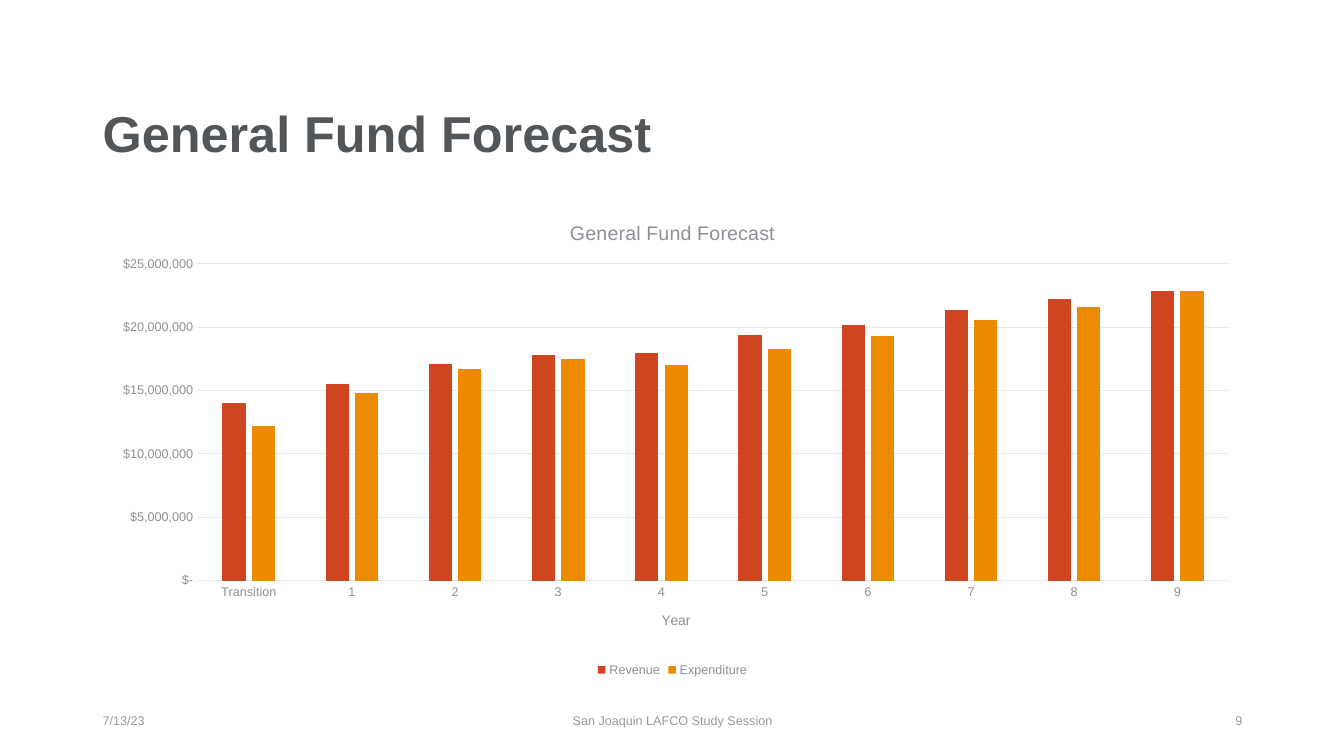
from lxml.etree import SubElement
from pptx import Presentation
from pptx.chart.data import CategoryChartData
from pptx.dml.color import RGBColor
from pptx.enum.chart import XL_CHART_TYPE as ChartType
from pptx.enum.chart import XL_LEGEND_POSITION as LegendPosition
from pptx.enum.chart import XL_TICK_MARK as TickMark
from pptx.enum.text import MSO_ANCHOR as Anchor
from pptx.enum.text import PP_ALIGN as Align
from pptx.oxml.ns import qn
from pptx.util import Pt

EMU_PER_PX = 9144  # 100 px to the inch
FONT = "Arial"
COLORS = {
    "title": "535659",
    "label": "8D9195",
    "footer": "999A9B",
    "grid": "E5E6E7",
    "revenue": "CF4520",
    "expenditure": "ED8B00",
}
YEARS = ["Transition"] + [str(year) for year in range(1, 10)]
MILLIONS = {
    "Revenue": [14, 15.5, 17.1, 17.8, 18, 19.4, 20.2, 21.4, 22.2, 22.9],
    "Expenditure": [12.2, 14.8, 16.7, 17.5, 17, 18.3, 19.3, 20.6, 21.6, 22.9],
}
PLOT_LAYOUT = {"x": 0.09, "y": 0.13, "w": 0.89, "h": 0.66}


class ForecastPage:
    def __init__(self, deck):
        self.page = deck.slides.add_slide(deck.slide_layouts[6])

    def px(self, *lengths):
        return [length * EMU_PER_PX for length in lengths]

    def color(self, name):
        return RGBColor.from_string(COLORS[name])

    def style(self, font, size, color, bold=False):
        font.name, font.size, font.bold = FONT, Pt(size), bold
        font.color.rgb = self.color(color)

    def line(self, line_format):
        line_format.color.rgb = self.color("grid")
        line_format.width = Pt(0.75)

    def add_span(self, para, words, size, color, bold=False):
        span = para.add_run()
        span.text = words
        self.style(span.font, size, color, bold)

    def text(self, words, place, size, color, align=Align.LEFT, bold=False):
        frame = self.page.shapes.add_textbox(*self.px(*place)).text_frame
        frame.word_wrap = True
        frame.vertical_anchor = Anchor.MIDDLE
        para = frame.paragraphs[0]
        para.alignment = align
        self.add_span(para, words, size, color, bold)
        return para

    def column_chart(self, title, axis_title, place):
        data = CategoryChartData()
        data.categories = YEARS
        for name, amounts in MILLIONS.items():
            data.add_series(name, [round(amount * 1_000_000) for amount in amounts])
        chart = self.page.shapes.add_chart(
            ChartType.COLUMN_CLUSTERED, *self.px(*place), data).chart
        self.style(chart.font, 10, "title")
        self.add_span(chart.chart_title.text_frame.paragraphs[0], title, 14, "label")

        plot = chart.plots[0]
        plot.gap_width, plot.overlap = 219, -27
        plot.vary_by_categories = False
        for series in plot.series:
            series.format.fill.solid()
            series.format.fill.fore_color.rgb = self.color(series.name.lower())

        chart.has_legend = True
        chart.legend.position = LegendPosition.BOTTOM
        chart.legend.include_in_layout = False
        self.style(chart.legend.font, 9, "label")
        self.axes(chart, axis_title)
        self.fix_plot_area(chart)

    def axes(self, chart, axis_title):
        for axis in (chart.category_axis, chart.value_axis):
            axis.major_tick_mark = axis.minor_tick_mark = TickMark.NONE
            self.style(axis.tick_labels.font, 9, "label")
        self.line(chart.category_axis.format.line)
        para = chart.category_axis.axis_title.text_frame.paragraphs[0]
        self.add_span(para, axis_title, 10, "label")

        values = chart.value_axis
        values.minimum_scale, values.maximum_scale = 0, 25_000_000
        values.major_unit = 5_000_000
        values.tick_labels.number_format = '"$"#,##0;"$"(#,##0);"$-"'
        values.tick_labels.number_format_is_linked = False
        values.format.line.fill.background()
        self.line(values.major_gridlines.format.line)

    def fix_plot_area(self, chart):
        """Pin the inner plot area to fractions of the chart."""
        area = chart.element.find(".//" + qn("c:plotArea"))
        for layout in area.findall(qn("c:layout")):
            area.remove(layout)
        layout = SubElement(area, qn("c:layout"))
        area.insert(0, layout)
        manual = SubElement(layout, qn("c:manualLayout"))
        settings = {"layoutTarget": "inner", "xMode": "edge", "yMode": "edge", **PLOT_LAYOUT}
        for tag, value in settings.items():
            SubElement(manual, qn("c:" + tag)).set("val", str(value))


def main():
    deck = Presentation()
    deck.slide_width, deck.slide_height = 1333 * EMU_PER_PX, 750 * EMU_PER_PX
    page = ForecastPage(deck)
    heading = page.text("General Fund Forecast", (92, 86, 1150, 99), 36, "title", bold=True)
    heading.line_spacing = 0.9
    page.column_chart("General Fund Forecast", "Year", (92, 200, 1150, 476))
    for words, left, width, align in (
        ("7/13/23", 92, 300, Align.LEFT),
        ("San Joaquin LAFCO Study Session", 442, 450, Align.CENTER),
        ("9", 942, 300, Align.RIGHT),
    ):
        page.text(words, (left, 695, width, 40), 9, "footer", align)
    deck.save("out.pptx")


if __name__ == "__main__":
    main()
